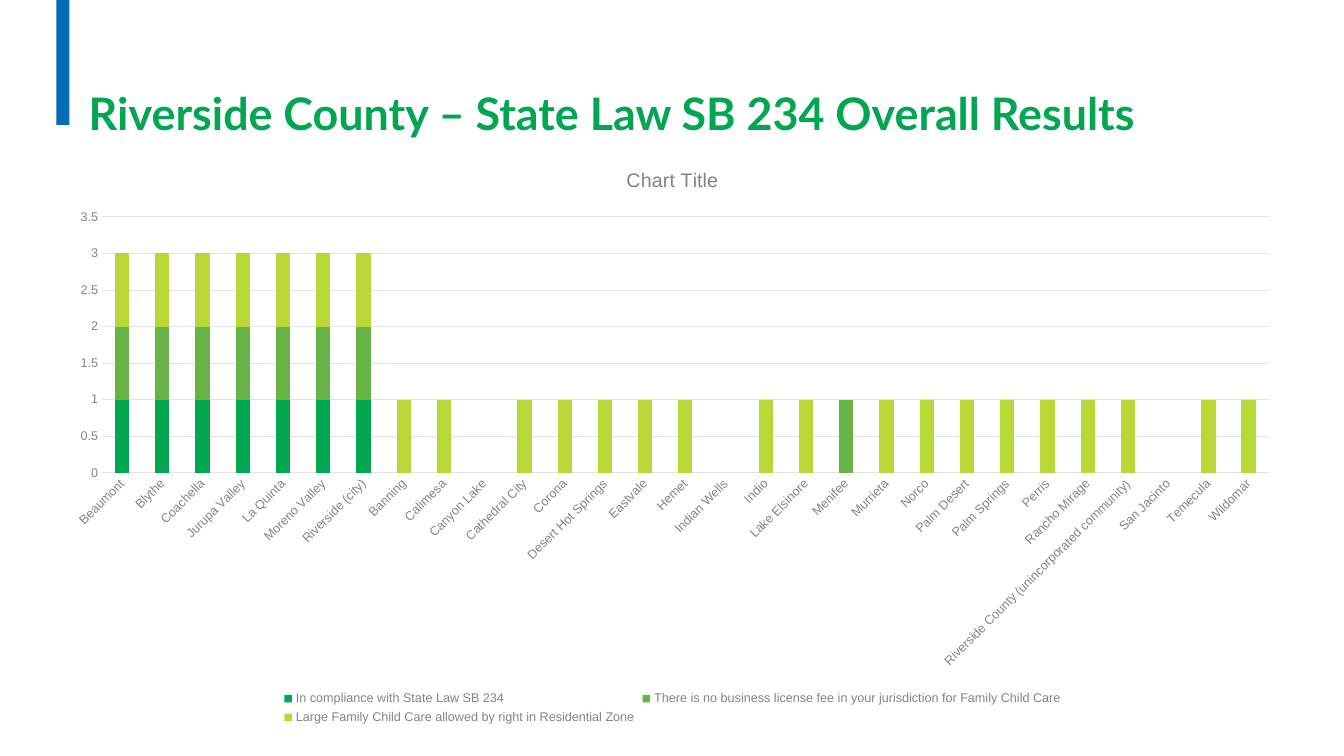
"""Build the Riverside County SB 234 results slide."""
from dataclasses import dataclass

from pptx import Presentation
from pptx.chart.data import CategoryChartData
from pptx.dml.color import RGBColor
from pptx.enum.chart import XL_CHART_TYPE, XL_LEGEND_POSITION, XL_TICK_MARK
from pptx.enum.shapes import MSO_SHAPE
from pptx.enum.text import MSO_ANCHOR, MSO_AUTO_SIZE, PP_ALIGN
from pptx.oxml.ns import qn
from pptx.util import Inches, Pt

STACKED = XL_CHART_TYPE.COLUMN_STACKED
LEGEND_BOTTOM = XL_LEGEND_POSITION.BOTTOM
NO_TICK = XL_TICK_MARK.NONE
RECTANGLE = MSO_SHAPE.RECTANGLE
ANCHOR_BOTTOM = MSO_ANCHOR.BOTTOM
NO_AUTOFIT = MSO_AUTO_SIZE.NONE
ALIGN_LEFT = PP_ALIGN.LEFT

TITLE = "Riverside County – State Law SB 234 Overall Results"
CHART_TITLE = "Chart Title"
COMPLIANCE = "In compliance with State Law SB 234"
NO_FEE = "There is no business license fee in your jurisdiction for Family Child Care"
BY_RIGHT = "Large Family Child Care allowed by right in Residential Zone"

COMPLIANT = ["Beaumont", "Blythe", "Coachella", "Jurupa Valley", "La Quinta",
             "Moreno Valley", "Riverside (city)"]
OTHERS = ["Banning", "Calimesa", "Canyon Lake", "Cathedral City", "Corona",
          "Desert Hot Springs", "Eastvale", "Hemet", "Indian Wells", "Indio",
          "Lake Elsinore", "Menifee", "Murrieta", "Norco", "Palm Desert",
          "Palm Springs", "Perris", "Rancho Mirage",
          "Riverside County (unincorporated community)", "San Jacinto",
          "Temecula", "Wildomar"]
JURISDICTIONS = COMPLIANT + OTHERS
NOT_BY_RIGHT = {"Canyon Lake", "Indian Wells", "Menifee", "San Jacinto"}
RESULTS = {
    COMPLIANCE: set(COMPLIANT),
    NO_FEE: {*COMPLIANT, "Menifee"},
    BY_RIGHT: set(JURISDICTIONS) - NOT_BY_RIGHT,
}


@dataclass(frozen=True)
class Theme:
    """Colours, fonts and type sizes."""
    accent: str = "006EB6"
    title: str = "01A652"
    text: str = "424242"
    muted: str = "848484"
    grid: str = "E3E3E3"
    results: tuple = ("01A651", "67B346", "BAD738")
    title_font: str = "Lato"
    chart_font: str = "Arial"
    title_size: int = 32
    chart_title_size: int = 14
    chart_size: int = 10
    label_size: int = 9
    line_width: float = 0.75


THEME = Theme()


def style_font(font, name, size, color, bold=False):
    """Set the typeface, size, colour and weight."""
    font.name, font.size, font.bold = name, Pt(size), bold
    font.color.rgb = RGBColor.from_string(color)


def style_line(line):
    """Give a line the grid colour and width."""
    line.color.rgb = RGBColor.from_string(THEME.grid)
    line.width = Pt(THEME.line_width)


def add_accent(slide):
    """Add the vertical bar at the top left."""
    accent = slide.shapes.add_shape(
        RECTANGLE, Inches(0.56), 0, Inches(0.13), Inches(1.24))
    accent.shadow.inherit = False
    accent.fill.solid()
    accent.fill.fore_color.rgb = RGBColor.from_string(THEME.accent)
    accent.line.fill.background()


def fill_title(title):
    """Place and write the slide title."""
    title.left, title.top = Inches(0.78), Inches(0.78)
    title.width, title.height = Inches(12), Inches(0.65)
    frame = title.text_frame
    frame.auto_size = NO_AUTOFIT
    frame.word_wrap = True
    frame.vertical_anchor = ANCHOR_BOTTOM
    heading = frame.paragraphs[0]
    heading.alignment = ALIGN_LEFT
    run = heading.add_run()
    run.text = TITLE
    style_font(run.font, THEME.title_font, THEME.title_size, THEME.title, True)


def add_results_chart(slide):
    """Add the stacked columns of results by jurisdiction."""
    results = CategoryChartData()
    results.categories = JURISDICTIONS
    for question, places in RESULTS.items():
        results.add_series(
            question, [1 if place in places else None for place in JURISDICTIONS])
    chart = slide.shapes.add_chart(
        STACKED, Inches(0.51), Inches(1.46), Inches(12.32), Inches(5.77),
        results).chart
    style_font(chart.font, THEME.chart_font, THEME.chart_size, THEME.text)

    run = chart.chart_title.text_frame.paragraphs[0].add_run()
    run.text = CHART_TITLE
    style_font(run.font, THEME.chart_font, THEME.chart_title_size, THEME.muted)
    chart.chart_title.include_in_layout = False

    chart.has_legend = True
    chart.legend.position = LEGEND_BOTTOM
    chart.legend.include_in_layout = False
    labelled = (chart.legend, chart.category_axis.tick_labels,
                chart.value_axis.tick_labels)
    for part in labelled:
        style_font(part.font, THEME.chart_font, THEME.label_size, THEME.muted)

    for axis in (chart.category_axis, chart.value_axis):
        axis.major_tick_mark = axis.minor_tick_mark = NO_TICK
    style_line(chart.category_axis.format.line)
    label_body = chart.category_axis._element.find(qn("c:txPr")).find(qn("a:bodyPr"))
    label_body.set("rot", "-2700000")
    label_body.set("vert", "horz")

    value_axis = chart.value_axis
    value_axis.minimum_scale, value_axis.maximum_scale = 0, 3.5
    value_axis.major_unit = 0.5
    value_axis.format.line.fill.background()
    style_line(value_axis.major_gridlines.format.line)

    plot = chart.plots[0]
    plot.gap_width, plot.overlap = 182, 100
    plot.vary_by_categories = False
    for series, color in zip(plot.series, THEME.results):
        series.format.fill.solid()
        series.format.fill.fore_color.rgb = RGBColor.from_string(color)


def main():
    """Create the slide and save it."""
    deck = Presentation()
    deck.slide_width, deck.slide_height = Inches(13.33), Inches(7.5)
    slide = deck.slides.add_slide(deck.slide_layouts[5])
    add_accent(slide)
    fill_title(slide.shapes.title)
    add_results_chart(slide)
    deck.save("out.pptx")


if __name__ == "__main__":
    main()
